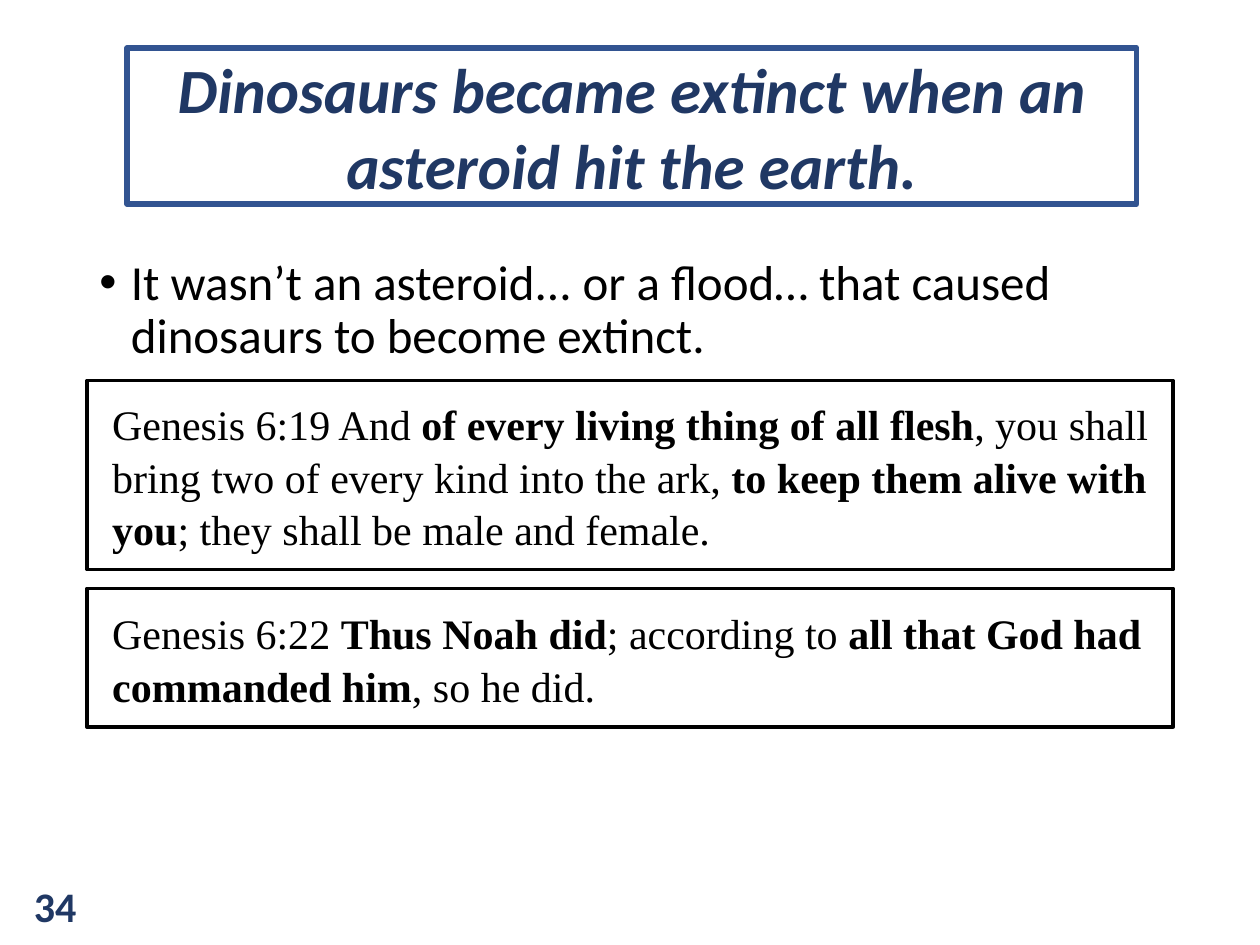
from lxml.etree import SubElement
from pptx import Presentation
from pptx.dml.color import RGBColor
from pptx.enum.shapes import MSO_SHAPE
from pptx.enum.text import MSO_ANCHOR, MSO_AUTO_SIZE, PP_ALIGN
from pptx.oxml.ns import qn
from pptx.util import Inches, Pt


def rgb(value):
    return RGBColor.from_string(value)


def write(para, text, size, font="Calibri", color="000000", bold=False, italic=False):
    span = para.add_run()
    span.text = text
    span.font.size = Pt(size)
    span.font.name = font
    span.font.color.rgb = rgb(color)
    span.font.bold = bold
    span.font.italic = italic


NAVY = "203864"
LEFT = Inches(0.69)

deck = Presentation()
deck.slide_width, deck.slide_height = Inches(10), Inches(7.5)
page = deck.slides.add_slide(deck.slide_layouts[5])

# Title
title = page.shapes.title
title.left, title.top = Inches(1.01), Inches(0.38)
title.width, title.height = Inches(8.01), Inches(1.24)
title.fill.solid()
title.fill.fore_color.rgb = rgb("FFFFFF")
title.line.color.rgb = rgb("325491")
title.line.width = Pt(3.25)
frame = title.text_frame
frame.auto_size = MSO_AUTO_SIZE.NONE
frame.vertical_anchor = MSO_ANCHOR.MIDDLE
para = frame.paragraphs[0]
para.alignment = PP_ALIGN.CENTER
write(para, "Dinosaurs became extinct when an asteroid hit the earth.", 36,
      color=NAVY, bold=True, italic=True)

# Bulleted statement
statement = page.shapes.add_textbox(LEFT, Inches(2), Inches(8.75), Inches(4.76))
statement.text_frame.word_wrap = True
para = statement.text_frame.paragraphs[0]
para.line_spacing = 0.9
props = para._p.get_or_add_pPr()
props.set("marL", str(Inches(0.25)))
props.set("indent", str(Inches(-0.25)))
SubElement(props, qn("a:buFont")).set("typeface", "Arial")
SubElement(props, qn("a:buChar")).set("char", "•")
write(para, "It wasn’t an asteroid... or a flood… that caused dinosaurs to become extinct.", 28)

# Verses: top, height, then pieces that alternate between regular and bold
verses = [
    (3.02, 1.5, ["Genesis 6:19 And ", "of every living thing of all flesh",
                 ", you shall bring two of every kind into the ark, ",
                 "to keep them alive with you", "; they shall be male and female."]),
    (4.67, 1.1, ["Genesis 6:22 ", "Thus Noah did", "; according to ",
                 "all that God had commanded him", ", so he did."]),
]
for top, height, pieces in verses:
    box = page.shapes.add_shape(MSO_SHAPE.RECTANGLE, LEFT, Inches(top),
                                Inches(8.62), Inches(height))
    box.shadow.inherit = False
    box.fill.solid()
    box.fill.fore_color.rgb = rgb("FFFFFF")
    box.line.color.rgb = rgb("000000")
    box.line.width = Pt(2)
    frame = box.text_frame
    frame.word_wrap = True
    frame.vertical_anchor = MSO_ANCHOR.MIDDLE
    frame.margin_left = Inches(0.2)
    para = frame.paragraphs[0]
    para.alignment = PP_ALIGN.LEFT
    para.line_spacing = 1.05
    for index, piece in enumerate(pieces):
        write(para, piece, 24, font="Times New Roman", bold=index % 2 == 1)

# Page number
number = page.shapes.add_textbox(Inches(0.17), Inches(6.94), Inches(0.84), Inches(0.5))
number.text_frame.word_wrap = True
number.text_frame.auto_size = MSO_AUTO_SIZE.SHAPE_TO_FIT_TEXT
write(number.text_frame.paragraphs[0], "34", 24, color=NAVY, bold=True)

deck.save("out.pptx")
